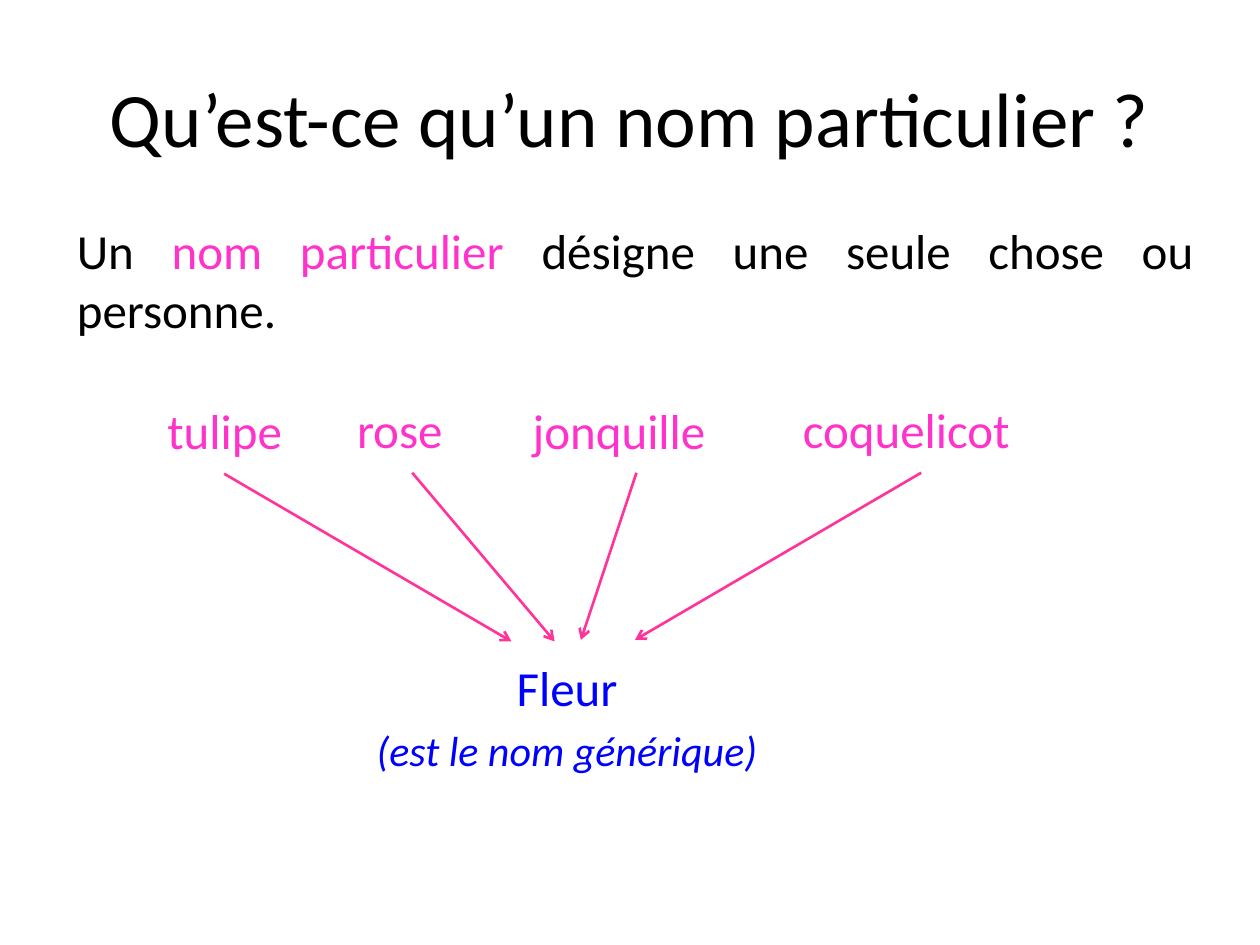
from dataclasses import dataclass

from lxml.etree import SubElement
from pptx import Presentation
from pptx.dml.color import RGBColor
from pptx.enum.shapes import MSO_CONNECTOR
from pptx.enum.text import MSO_ANCHOR, PP_ALIGN
from pptx.oxml.ns import qn
from pptx.util import Cm, Pt


@dataclass(frozen=True)
class Theme:
    font: str = "Calibri"
    ink: str = "000000"
    specific: str = "FF33CC"
    generic: str = "0000FF"
    arrow: str = "FF3399"
    title_size: int = 44
    text_size: int = 28
    note_size: int = 24
    arrow_width: float = 1.5


THEME = Theme()

# Word, left and top of its box, start and end of its arrow (cm)
FLOWERS = [
    ("tulipe", 1.7, 7.95, (4.52, 9.55), (10.31, 12.93)),
    ("rose", 5.23, 7.92, (8.31, 9.53), (11.18, 12.93)),
    ("jonquille", 9.65, 7.95, (12.83, 9.53), (11.71, 12.9)),
    ("coquelicot", 15.44, 7.92, (18.57, 9.53), (12.8, 12.9)),
]


def add_text(para, text, color=THEME.ink, size=THEME.text_size, italic=False,
             align=PP_ALIGN.CENTER, before=0):
    """Append a formatted span to a paragraph."""
    para.alignment = align
    para.space_before = Pt(before)
    span = para.add_run()
    span.text = text
    span.font.name = THEME.font
    span.font.size = Pt(size)
    span.font.italic = italic
    span.font.color.rgb = RGBColor.from_string(color)


def add_box(page, left, top, width, height):
    """Add a wrapping text box and return its text frame."""
    box = page.shapes.add_textbox(Cm(left), Cm(top), Cm(width), Cm(height))
    box.text_frame.word_wrap = True
    return box.text_frame


def add_arrow(page, start, end):
    """Add a straight arrow with an open head at its end."""
    arrow = page.shapes.add_connector(
        MSO_CONNECTOR.STRAIGHT, *(Cm(value) for value in start + end))
    arrow.line.color.rgb = RGBColor.from_string(THEME.arrow)
    arrow.line.width = Pt(THEME.arrow_width)
    SubElement(arrow.line._get_or_add_ln(), qn("a:tailEnd"), type="arrow")
    SubElement(arrow._element.spPr, qn("a:effectLst"))


def add_title(page, text):
    title = page.shapes.title
    title.left, title.top = Cm(1.27), Cm(0.76)
    title.width, title.height = Cm(22.86), Cm(3.18)
    title.text_frame.vertical_anchor = MSO_ANCHOR.MIDDLE
    add_text(title.text_frame.paragraphs[0], text, size=THEME.title_size)


def add_definition(page):
    para = add_box(page, 1.3, 4.32, 23.01, 2.64).paragraphs[0]
    for text, color in [
        ("Un ", THEME.ink),
        ("nom particulier ", THEME.specific),
        ("désigne une seule chose ou personne.", THEME.ink),
    ]:
        add_text(para, text, color=color, align=PP_ALIGN.JUSTIFY)


def add_generic_name(page):
    frame = add_box(page, 7.19, 13.13, 8.48, 4.19)
    add_text(frame.paragraphs[0], "Fleur", color=THEME.generic)
    add_text(frame.add_paragraph(), "(est le nom générique)", color=THEME.generic,
             size=THEME.note_size, italic=True, before=4.8)


def main():
    deck = Presentation()
    deck.slide_width, deck.slide_height = Cm(25.4), Cm(19.05)
    page = deck.slides.add_slide(deck.slide_layouts.get_by_name("Title Only"))

    # Title and definition
    add_title(page, "Qu’est-ce qu’un nom particulier ?")
    add_definition(page)

    # Specific names, each pointing to the generic one
    for word, left, top, start, end in FLOWERS:
        frame = add_box(page, left, top, 5.66, 1.57)
        add_text(frame.paragraphs[0], word, color=THEME.specific)
        add_arrow(page, start, end)

    # Generic name
    add_generic_name(page)

    deck.save("out.pptx")


if __name__ == "__main__":
    main()
